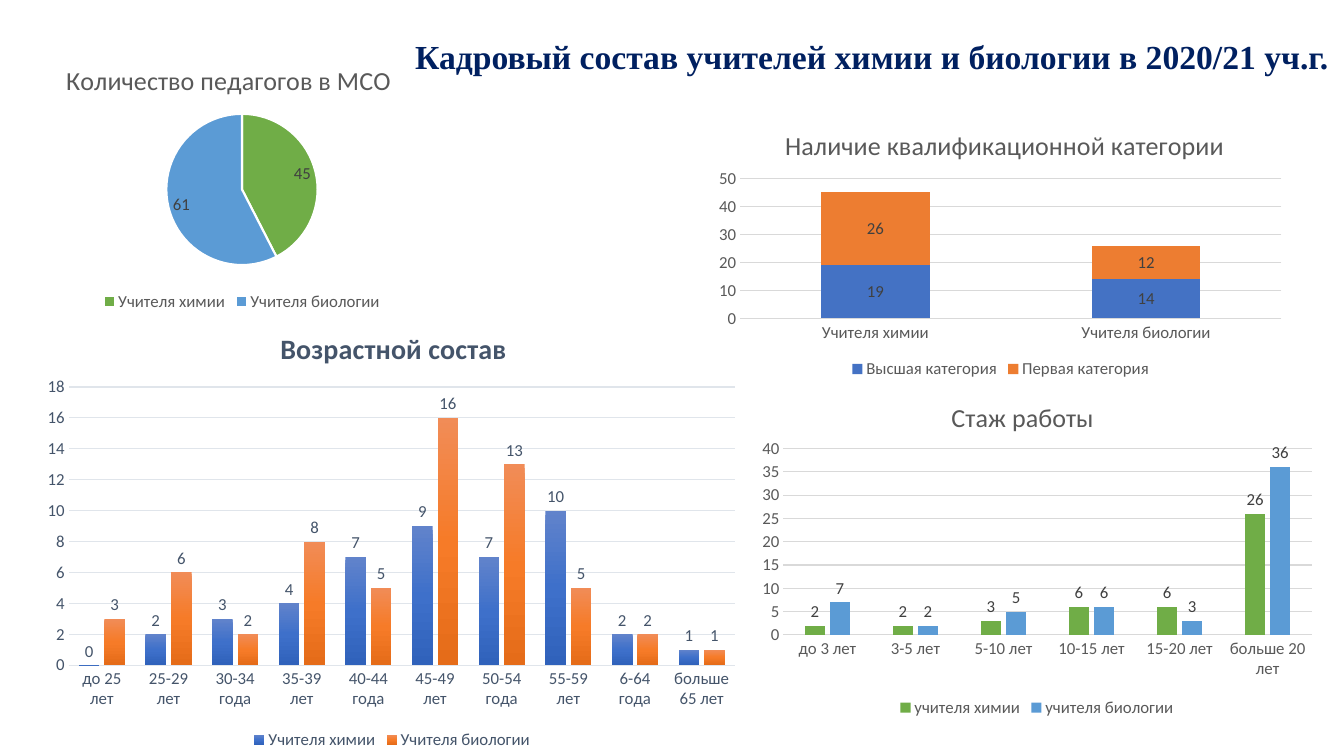
from lxml import etree
from pptx import Presentation
from pptx.chart.data import CategoryChartData
from pptx.dml.color import RGBColor
from pptx.enum.chart import XL_CHART_TYPE, XL_LABEL_POSITION, XL_LEGEND_POSITION, XL_TICK_MARK
from pptx.oxml.ns import qn
from pptx.util import Inches, Pt

CLUSTERED = XL_CHART_TYPE.COLUMN_CLUSTERED
STACKED = XL_CHART_TYPE.COLUMN_STACKED
PIE = XL_CHART_TYPE.PIE
OUTSIDE, CENTER = XL_LABEL_POSITION.OUTSIDE_END, XL_LABEL_POSITION.CENTER
BEST_FIT = XL_LABEL_POSITION.BEST_FIT
BOTTOM = XL_LEGEND_POSITION.BOTTOM
NO_TICK = XL_TICK_MARK.NONE

GREEN, SKY, BLUE, ORANGE = "70AD47", "5B9BD5", "4472C4", "ED7D31"
GRAY, DARK, SLATE = "595959", "404040", "44546A"
GRID, PALE = "D9D9D9", "E0E5EB"
BLUE_FADE = ("6183CB", "3E70CA", "3062BB")
ORANGE_FADE = ("F18C57", "F67B28", "E56C19")


def rgb(value):
    """Return a colour from its hex string."""
    return RGBColor.from_string(value)


def style_font(font, size, color, bold=False, name="Calibri"):
    """Set size, colour, weight and face of a font."""
    font.size, font.bold, font.name = Pt(size), bold, name
    font.color.rgb = rgb(color)


def add_text(p, text, **style):
    """Add a formatted run to a paragraph."""
    r = p.add_run()
    r.text = text
    style_font(r.font, **style)


def set_layout(element, box, frame, inner=False):
    """Place a chart part at a slide position given in inches."""
    layout = element.find(qn("c:layout"))
    if layout is None:
        layout = etree.Element(qn("c:layout"))
        element.insert(1 if element.tag == qn("c:title") else 0, layout)
    for child in list(layout):
        layout.remove(child)
    manual = etree.SubElement(layout, qn("c:manualLayout"))
    left, top, width, height = frame
    values = [("xMode", "edge"), ("yMode", "edge"),
              ("x", (box[0] - left) / width), ("y", (box[1] - top) / height)]
    if inner:
        values.insert(0, ("layoutTarget", "inner"))
        values += [("w", box[2] / width), ("h", box[3] / height)]
    for tag, value in values:
        etree.SubElement(manual, qn("c:" + tag)).set("val", str(value))


def fill_series(series, color):
    """Fill a series with one colour or a downward gradient."""
    if isinstance(color, str):
        series.format.fill.solid()
        series.format.fill.fore_color.rgb = rgb(color)
        return
    grad = etree.SubElement(series._element.get_or_add_spPr(), qn("a:gradFill"))
    stops = etree.SubElement(grad, qn("a:gsLst"))
    for i, value in enumerate(color):
        stop = etree.SubElement(stops, qn("a:gs"), pos=str(i * 50000))
        etree.SubElement(stop, qn("a:srgbClr"), val=value)
    etree.SubElement(grad, qn("a:lin"), ang="5400000", scaled="0")


def style_axis(axis, color, line=None):
    """Format the labels and the line of an axis."""
    axis.major_tick_mark = axis.minor_tick_mark = NO_TICK
    style_font(axis.tick_labels.font, 12, color)
    if line:
        axis.format.line.color.rgb = rgb(line)
        axis.format.line.width = Pt(0.75)
    else:
        axis.format.line.fill.background()


def add_chart(s, kind, frame, title, title_at, plot_box, cats, series,
              label_pos, color=GRAY, label_color=DARK, title_size=18.6, bold=False):
    """Add a chart with a title, legend and value labels."""
    data = CategoryChartData()
    data.categories = cats
    for name, values in series:
        data.add_series(name, values)
    chart = s.shapes.add_chart(kind, *map(Inches, frame), data).chart
    style_font(chart.font, 10, "000000")
    chart.has_title = True
    add_text(chart.chart_title.text_frame.paragraphs[0], title,
             size=title_size, color=color, bold=bold)
    set_layout(chart.chart_title._element, title_at, frame)
    set_layout(chart._chartSpace.chart.plotArea, plot_box, frame, inner=True)
    chart.has_legend = True
    chart.legend.position = BOTTOM
    chart.legend.include_in_layout = False
    style_font(chart.legend.font, 12, color)
    plot = chart.plots[0]
    plot.has_data_labels = True
    labels = plot.data_labels
    labels.show_value = True
    labels.show_percentage = False
    labels.position = label_pos
    style_font(labels.font, 12, label_color)
    return chart


def style_columns(chart, colors, gap, overlap, top, step, color=GRAY, grid=GRID, base=None):
    """Format the columns, axes and gridlines of a column chart."""
    plot = chart.plots[0]
    plot.vary_by_categories = False
    plot.gap_width, plot.overlap = gap, overlap
    for series, fill in zip(plot.series, colors):
        fill_series(series, fill)
    style_axis(chart.category_axis, color, base)
    axis = chart.value_axis
    style_axis(axis, color)
    axis.minimum_scale, axis.maximum_scale, axis.major_unit = 0, top, step
    axis.has_major_gridlines = True
    axis.major_gridlines.format.line.color.rgb = rgb(grid)
    axis.major_gridlines.format.line.width = Pt(0.75)


def style_pie(chart, colors):
    """Colour the slices of a pie and outline them in white."""
    plot = chart.plots[0]
    plot.vary_by_categories = True
    for i, color in enumerate(colors):
        fmt = plot.series[0].points[i].format
        fmt.fill.solid()
        fmt.fill.fore_color.rgb = rgb(color)
        fmt.line.color.rgb = rgb("FFFFFF")
        fmt.line.width = Pt(1.5)


def main():
    """Build the slide and save it."""
    prs = Presentation()
    prs.slide_width, prs.slide_height = Inches(13.33), Inches(7.5)
    s = prs.slides.add_slide(prs.slide_layouts[6])

    tf = s.shapes.add_textbox(*map(Inches, (4.02, 0.31, 9.46, 0.5))).text_frame
    tf.word_wrap = True
    add_text(tf.paragraphs[0], "Кадровый состав учителей химии и биологии в 2020/21 уч.г.",
             size=24, color="002060", bold=True, name="Times New Roman")

    experience = add_chart(
        s, CLUSTERED, (7.44, 3.69, 5.69, 3.47), "Стаж работы", (9.39, 3.91),
        (7.77, 4.45, 5.24, 1.85),
        ["до 3 лет", "3-5 лет", "5-10 лет", "10-15 лет", "15-20 лет", "больше 20 лет"],
        [("учителя химии", [2, 2, 3, 6, 6, 26]), ("учителя биологии", [7, 2, 5, 6, 3, 36])],
        OUTSIDE)
    style_columns(experience, (GREEN, SKY), 219, -27, 40, 5, base=GRID)

    teachers = ["Учителя химии", "Учителя биологии"]
    category = add_chart(
        s, STACKED, (7.02, 1.02, 5.81, 2.78), "Наличие квалификационной категории",
        (7.74, 1.21), (7.34, 1.77, 5.37, 1.39), teachers,
        [("Высшая категория", [19, 14]), ("Первая категория", [26, 12])], CENTER)
    style_columns(category, (BLUE, ORANGE), 150, 100, 50, 10)

    staff = add_chart(
        s, PIE, (-0.1, 0.41, 5, 2.72), "Количество педагогов в МСО", (0.61, 0.57),
        (1.65, 1.13, 1.5, 1.5), teachers, [("Series 1", [45, 61])], BEST_FIT)
    style_pie(staff, (GREEN, SKY))

    ages = add_chart(
        s, CLUSTERED, (0.34, 2.96, 7.1, 4.52), "Возрастной состав", (2.73, 3.21),
        (0.68, 3.84, 6.61, 2.76),
        ["до 25 лет", "25-29 лет", "30-34 года", "35-39 лет", "40-44 года",
         "45-49 лет", "50-54 года", "55-59 лет", "6-64 года", "больше 65 лет"],
        list(zip(teachers, ([0, 2, 3, 4, 7, 9, 7, 10, 2, 1], [3, 6, 2, 8, 5, 16, 13, 5, 2, 1]))),
        OUTSIDE, color=SLATE, label_color=SLATE, title_size=20, bold=True)
    style_columns(ages, (BLUE_FADE, ORANGE_FADE), 100, -24, 18, 2, SLATE, PALE, PALE)

    prs.save("out.pptx")


if __name__ == "__main__":
    main()
